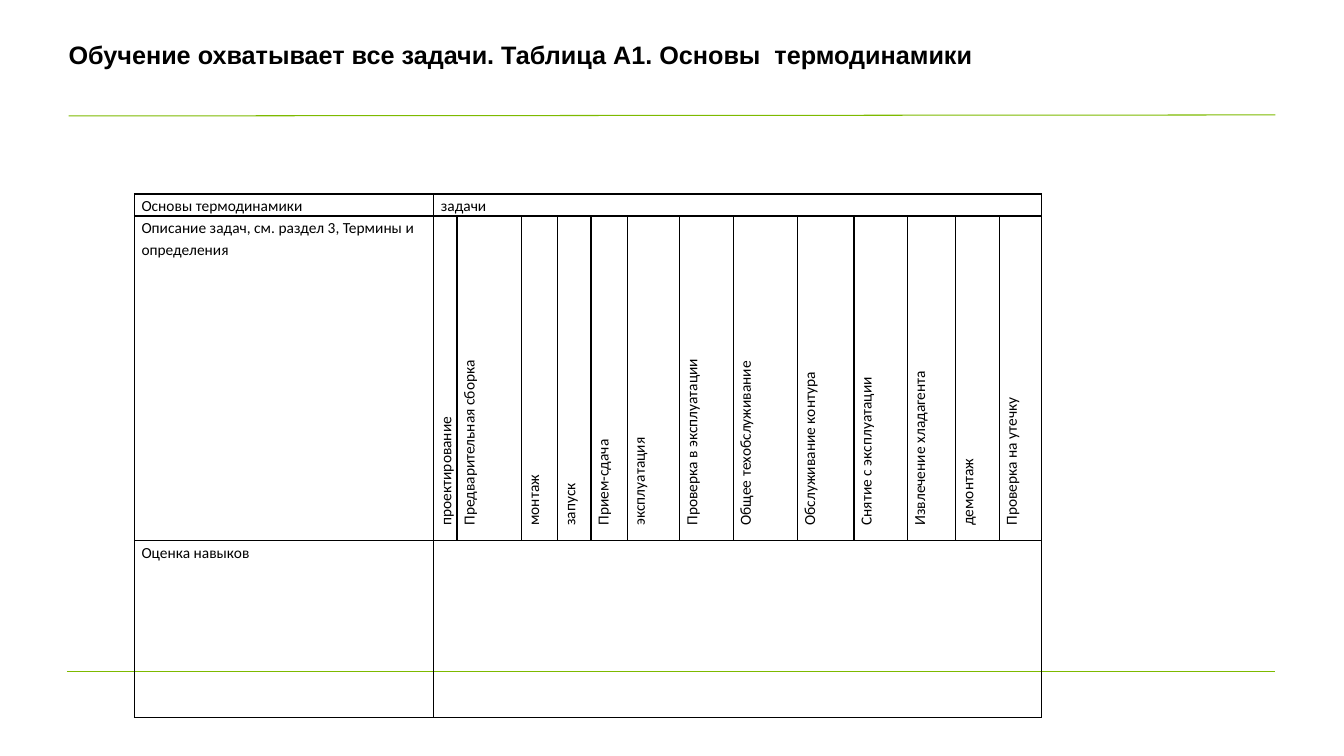
from lxml.etree import SubElement
from pptx import Presentation
from pptx.dml.color import RGBColor
from pptx.enum.shapes import MSO_CONNECTOR
from pptx.enum.text import MSO_ANCHOR, PP_ALIGN
from pptx.oxml import parse_xml
from pptx.oxml.ns import nsdecls, qn
from pptx.util import Pt

BLACK = RGBColor(0, 0, 0)
GREEN = RGBColor(0x7D, 0xBA, 0x00)

WIDTHS = [213.84, 16.56, 46.08, 25.92, 23.76, 25.92, 37.44,
          38.16, 46.08, 40.32, 38.16, 34.56, 30.96, 30.24]
HEIGHTS = [15.4, 231.8, 126.7]
TASKS = [
    "проектирование",
    "Предварительная сборка",
    "монтаж",
    "запуск",
    "Прием-сдача",
    "эксплуатация",
    "Проверка в эксплуатации",
    "Общее техобслуживание",
    "Обслуживание контура",
    "Снятие с эксплуатации",
    "Извлечение хладагента",
    "демонтаж",
    "Проверка на утечку",
]
ROWS = [
    ["Основы термодинамики", "задачи"],
    ["Описание задач, см. раздел 3, Термины и определения"] + TASKS,
    ["Оценка навыков"],
]


def style(par, name, size, space, bold=False):
    par.line_spacing = space
    par.alignment = PP_ALIGN.LEFT
    for run in par.runs:
        run.font.name = name
        run.font.size = Pt(size)
        run.font.bold = bold
        run.font.color.rgb = BLACK


def add_title(slide, left, top, width, height):
    title = slide.shapes.title
    title.left, title.top = Pt(left), Pt(top)
    title.width, title.height = Pt(width), Pt(height)
    frame = title.text_frame
    frame.text = "Обучение охватывает все задачи. Таблица А1. Основы  термодинамики"
    frame.word_wrap = True
    frame.vertical_anchor = MSO_ANCHOR.TOP
    frame.margin_left = frame.margin_right = 0
    frame.margin_top = frame.margin_bottom = 0
    style(frame.paragraphs[0], "Arial", 18, 1.1, True)


def add_rule(slide, left, top, right, end):
    rule = slide.shapes.add_connector(
        MSO_CONNECTOR.STRAIGHT, Pt(left), Pt(top), Pt(right), Pt(end))
    rule.line.color.rgb = GREEN
    rule.line.width = Pt(0.75)
    SubElement(rule.element.spPr, qn("a:effectLst"))


def add_edges(cell):
    props = cell._tc.get_or_add_tcPr()
    for side in ("lnL", "lnR", "lnT", "lnB"):
        props.append(parse_xml(
            f'<a:{side} {nsdecls("a")} w="{Pt(1)}"><a:solidFill>'
            f'<a:srgbClr val="{BLACK}"/></a:solidFill></a:{side}>'))
    cell.fill.background()


def fill_cell(cell, text, turned):
    cell.margin_left = cell.margin_right = Pt(5)
    cell.margin_top = cell.margin_bottom = 0
    cell.vertical_anchor = MSO_ANCHOR.TOP
    par = cell.text_frame.paragraphs[0]
    if text:
        par.text = text
        style(par, "Calibri", 11, 1.15)
    else:
        SubElement(par._p, qn("a:endParaRPr"), sz="1100")
    if turned:
        cell._tc.get_or_add_tcPr().set("vert", "vert270")
        par._p.get_or_add_pPr().set("marL", str(Pt(5.65)))
    add_edges(cell)


def add_grid(slide, left, top):
    frame = slide.shapes.add_table(
        len(HEIGHTS), len(WIDTHS), Pt(left), Pt(top),
        Pt(sum(WIDTHS)), Pt(sum(HEIGHTS)))
    grid = frame.table
    grid.first_row = grid.horz_banding = False
    for col, width in zip(grid.columns, WIDTHS):
        col.width = Pt(width)
    for row, height in zip(grid.rows, HEIGHTS):
        row.height = Pt(height)
    last = len(WIDTHS) - 1
    for r in (0, 2):
        grid.cell(r, 1).merge(grid.cell(r, last))
    for r, texts in enumerate(ROWS):
        for c in range(len(WIDTHS)):
            text = texts[c] if c < len(texts) else ""
            fill_cell(grid.cell(r, c), text, r == 1 and c > 0)


def main():
    deck = Presentation()
    deck.slide_width, deck.slide_height = Pt(960), Pt(540)
    slide = deck.slides.add_slide(deck.slide_layouts[5])
    add_rule(slide, 47.8, 479.5, 911, 479.5)
    add_rule(slide, 49, 82.8, 911, 82.1)
    add_title(slide, 49, 25.9, 733, 51.1)
    add_grid(slide, 96.1, 138.6)
    deck.save("out.pptx")


if __name__ == "__main__":
    main()
